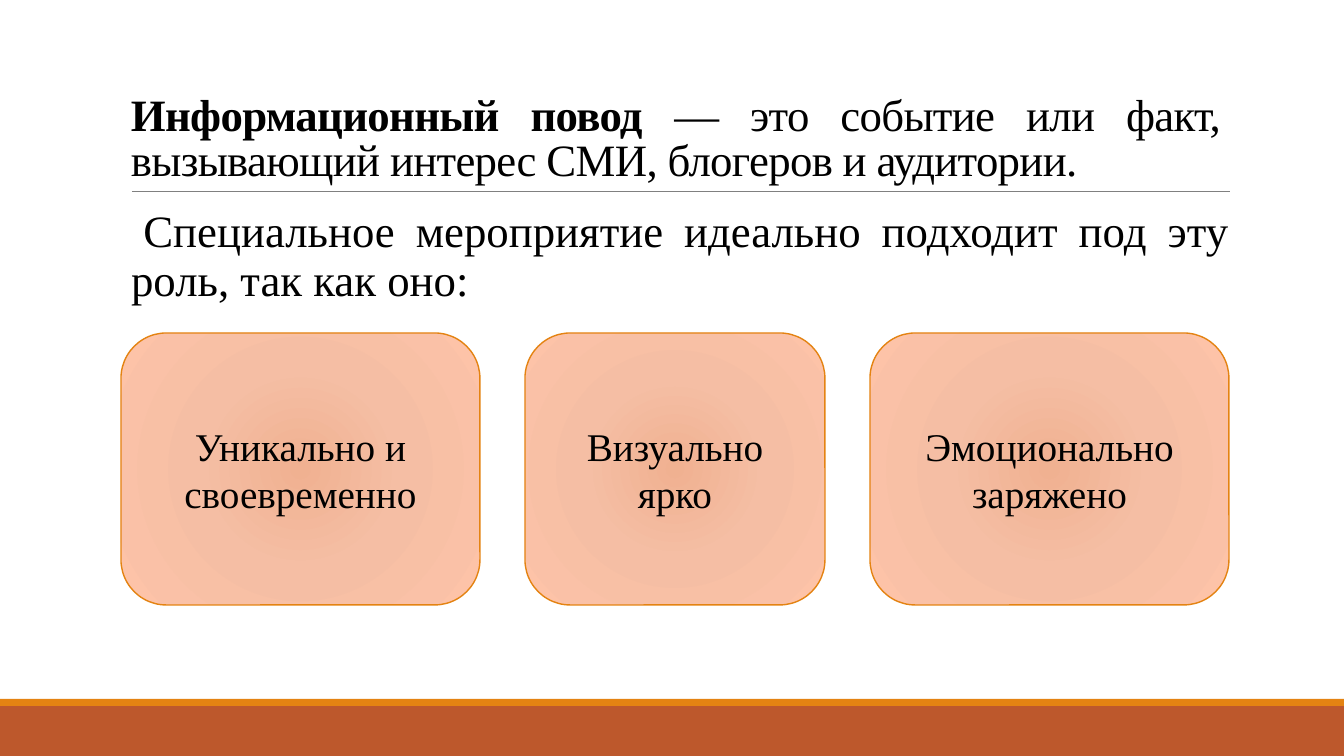
import pptx
import pptx.util
import pptx.dml.color
import pptx.enum.shapes
import pptx.enum.text
import pptx.oxml
import pptx.oxml.ns

PX = 914400 / 100.8
COLORS = {"rust": "BD582C", "orange": "E48312", "gray": "808080", "black": "000000",
          "core": "F0B191", "middle": "F5BEA4", "edge": "FDC3A8"}
FONT = "Times New Roman"
NS = pptx.oxml.ns.nsdecls("a")
ALIGN = pptx.enum.text.PP_ALIGN
ANCHOR = pptx.enum.text.MSO_ANCHOR
SHAPE = pptx.enum.shapes.MSO_SHAPE


def emu(*lengths):
    """Turn px lengths into EMU."""
    return [pptx.util.Emu(round(n * PX)) for n in lengths]


def rgb(name):
    """Look up a named colour."""
    return pptx.dml.color.RGBColor.from_string(COLORS[name])


def set_all(obj, formats):
    """Set attributes from a dict of format values."""
    for name, value in formats.items():
        setattr(obj, name, value)


def add_run(p, text, size, bold=False):
    """Add a black run to a paragraph."""
    r = p.add_run()
    r.text = text
    set_all(r.font, {"name": FONT, "size": pptx.util.Pt(size), "bold": bold})
    r.font.color.rgb = rgb("black")
    return r


def add_band(s, box, color):
    """Draw a plain filled band."""
    sp = s.shapes.add_shape(SHAPE.RECTANGLE, *emu(*box))
    sp.shadow.inherit = False
    sp.fill.solid()
    sp.fill.fore_color.rgb = rgb(color)
    sp.line.fill.background()


def add_rule(s, x1, x2, y):
    """Draw the thin line under the title."""
    line = s.shapes.add_connector(pptx.enum.shapes.MSO_CONNECTOR.STRAIGHT, *emu(x1, y, x2, y))
    line.line.color.rgb = rgb("gray")
    line.line.width = pptx.util.Pt(0.5)
    line._element.spPr.append(pptx.oxml.parse_xml(f"<a:effectLst {NS}/>"))


def add_text(s, box, runs, frame, para, tracking=None, bullet=False):
    """Place a justified text box of (text, bold) runs."""
    tf = s.shapes.add_textbox(*emu(*box)).text_frame
    set_all(tf, {"word_wrap": True, **frame})
    p = tf.paragraphs[0]
    set_all(p, {"alignment": ALIGN.JUSTIFY, **para})
    if bullet:
        pPr = p._p.get_or_add_pPr()
        pPr.set("marL", "91440")
        pPr.set("indent", "-91440")
        for xml in (f'<a:buClr {NS}><a:srgbClr val="{COLORS["orange"]}"/></a:buClr>',
                    f'<a:buChar {NS} char=" "/>'):
            pPr.append(pptx.oxml.parse_xml(xml))
    for text, bold in runs:
        r = add_run(p, text, 32, bold)
        if tracking:
            r._r.get_or_add_rPr().set("spc", str(tracking))


def add_card(s, box, text):
    """Draw a rounded card with a radial gradient and centred text."""
    sp = s.shapes.add_shape(SHAPE.ROUNDED_RECTANGLE, *emu(*box))
    stops = "".join(f'<a:gs pos="{pos}000"><a:srgbClr val="{COLORS[name]}"/></a:gs>'
                    for pos, name in ((0, "core"), (45, "middle"), (100, "edge")))
    sp._element.spPr.insert(2, pptx.oxml.parse_xml(
        f'<a:gradFill {NS} rotWithShape="1"><a:gsLst>{stops}</a:gsLst><a:path path="circle">'
        '<a:fillToRect l="100000" t="100000" r="100000" b="100000"/></a:path></a:gradFill>'))
    sp.shadow.inherit = False
    sp.line.color.rgb = rgb("orange")
    sp.line.width = pptx.util.Pt(1)
    tf = sp.text_frame
    set_all(tf, {"word_wrap": True, "vertical_anchor": ANCHOR.MIDDLE})
    p = tf.paragraphs[0]
    p.alignment = ALIGN.CENTER
    add_run(p, text, 28)


def add_cards(s, box, cards, gap):
    """Lay out cards of given widths from left to right."""
    x, y, height = box
    for text, width in cards:
        add_card(s, (x, y, width, height), text)
        x += width + gap


def main():
    """Build the slide and save it."""
    prs = pptx.Presentation()
    prs.slide_width, prs.slide_height = emu(1344, 756)
    s = prs.slides.add_slide(prs.slide_layouts[6])
    add_band(s, (0, 706, 1344, 50), "rust")
    add_band(s, (0, 699, 1344, 7), "orange")
    add_rule(s, 132, 1230, 191)
    add_text(s, (121, 31, 1109, 160),
             [("Информационный повод ", True),
              ("— это событие или факт, вызывающий интерес СМИ, блогеров и аудитории. ", False)],
             {"vertical_anchor": ANCHOR.BOTTOM}, {"line_spacing": 0.85}, tracking=-50)
    add_text(s, (121, 204, 1109, 117),
             [("Специальное мероприятие идеально подходит под эту роль, так как оно:", False)],
             {"margin_left": 0, "margin_right": 0},
             {"line_spacing": 0.9, "space_after": pptx.util.Pt(2)}, bullet=True)
    add_cards(s, (121, 333, 272),
              [("Уникально и своевременно", 359), ("Визуально ярко", 300),
               ("Эмоционально заряжено", 359)], 45)
    prs.save("out.pptx")


if __name__ == "__main__":
    main()
